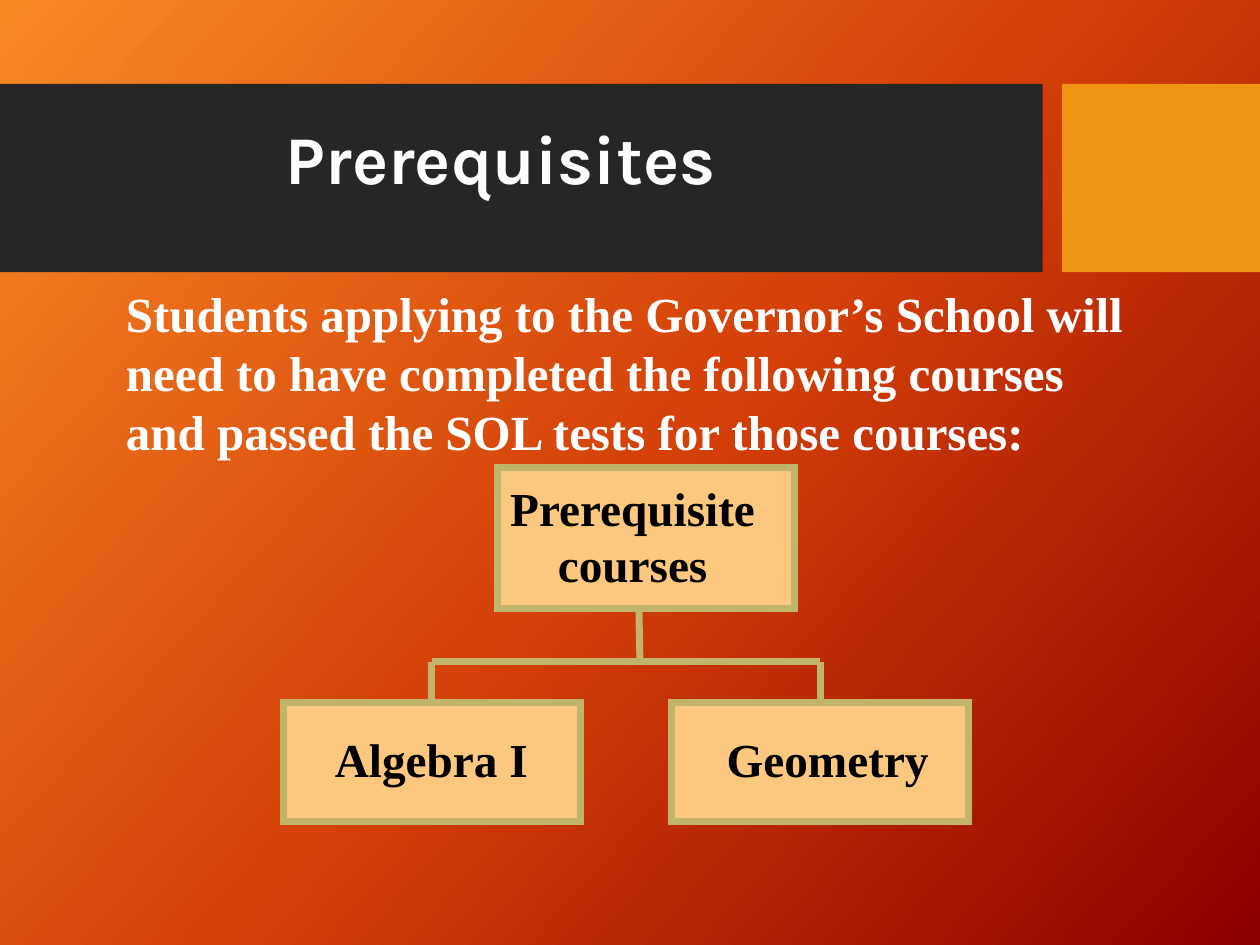
from copy import deepcopy
from pptx import Presentation, util as u
from pptx.dml.color import RGBColor
from pptx.enum import shapes, text
from pptx.oxml import parse_xml
from pptx.oxml.ns import nsdecls

WHITE = RGBColor(0xFF, 0xFF, 0xFF)
BLACK = RGBColor(0, 0, 0)
DARK = RGBColor(0x26, 0x26, 0x26)
AMBER = RGBColor(0xF0, 0x94, 0x15)
PEACH = RGBColor(0xFC, 0xC7, 0x7E)
KHAKI = RGBColor(0xC1, 0xB5, 0x6B)
GLOW = [
    (0, RGBColor(0xF7, 0x89, 0x25)),
    (0.5, RGBColor(0xD5, 0x42, 0x09)),
    (1, RGBColor(0x8D, 0, 0)),
]
SERIF = "Times New Roman"

TITLE = ["Prerequisites"]
INTRO = [
    "Students applying to the Governor’s School will",
    "need to have completed the following courses and passed the SOL tests for those courses:",
]
BANDS = [((0, 1.69, 21.02, 3.8), DARK), ((21.41, 1.69, 3.99, 3.8), AMBER)]
ROOT = ((10.03, 9.42, 5.99, 2.84), ["Prerequisite", "courses"], (10.01, 9.53, 5.49, 2.54))
KIDS = [
    ((5.71, 14.17, 5.99, 2.39), ["Algebra I"], (5.71, 14.6, 5.97, 1.4)),
    ((13.54, 14.17, 5.99, 2.39), ["Geometry"], (14.3, 14.6, 4.77, 1.4)),
]
BAR = 13.34
STEM = (12.88, 12.27, 12.9, BAR)

deck = Presentation()
deck.slide_width, deck.slide_height = u.Cm(25.4), u.Cm(19.05)
slide = deck.slides.add_slide(deck.slide_layouts[6])


def paint():
    fill = slide.background.fill
    fill.gradient()
    fill.gradient_angle = 360 - 42
    first = fill._fill._gradFill.gsLst[0]
    first.addnext(deepcopy(first))
    for stop, (pos, color) in zip(fill.gradient_stops, GLOW):
        stop.position = pos
        stop.color.rgb = color


def stroke(line):
    line.color.rgb = KHAKI
    line.width = u.Pt(4)


def block(rect, color):
    box = slide.shapes.add_shape(shapes.MSO_SHAPE.RECTANGLE, *map(u.Cm, rect))
    box.shadow.inherit = False
    box.fill.solid()
    box.fill.fore_color.rgb = color
    box.line.fill.background()
    return box


def write(rect, lines, size, color, font=SERIF, align="LEFT", space=1.0, anchor="TOP"):
    frame = slide.shapes.add_textbox(*map(u.Cm, rect)).text_frame
    frame.word_wrap = True
    frame.vertical_anchor = text.MSO_ANCHOR[anchor]
    frame.text = "\n".join(lines)
    for para in frame.paragraphs:
        para.alignment = text.PP_ALIGN[align]
        para.line_spacing = space
        para.font.name, para.font.size = font, u.Pt(size)
        para.font.bold, para.font.color.rgb = True, color


def node(rect, lines, place):
    box = block(rect, PEACH)
    stroke(box.line)
    box.line._ln.append(parse_xml(f"<a:miter {nsdecls('a')} lim='800000'/>"))
    write(place, lines, 27, BLACK, align="CENTER")
    return box


def link(x1, y1, x2, y2):
    wire = slide.shapes.add_connector(shapes.MSO_CONNECTOR.STRAIGHT, *map(u.Cm, (x1, y1, x2, y2)))
    stroke(wire.line)
    wire._element.spPr.append(parse_xml(f"<a:effectLst {nsdecls('a')}/>"))
    return wire


paint()
for rect, color in BANDS:
    block(rect, color)
write((5.51, 1.69, 17.98, 3.18), TITLE, 39, WHITE, font="Karla", space=0.9, anchor="MIDDLE")
write((2.29, 5.59, 21.21, 3.84), INTRO, 28, WHITE)

node(*ROOT)
link(*STEM)
mids = []
for kid in KIDS:
    box = node(*kid)
    left, top, width, height = kid[0]
    mid = left + width / 2
    link(mid, BAR, mid, top).end_connect(box, 0)
    mids.append(mid)
link(mids[0], BAR, mids[1], BAR)

deck.save("out.pptx")
